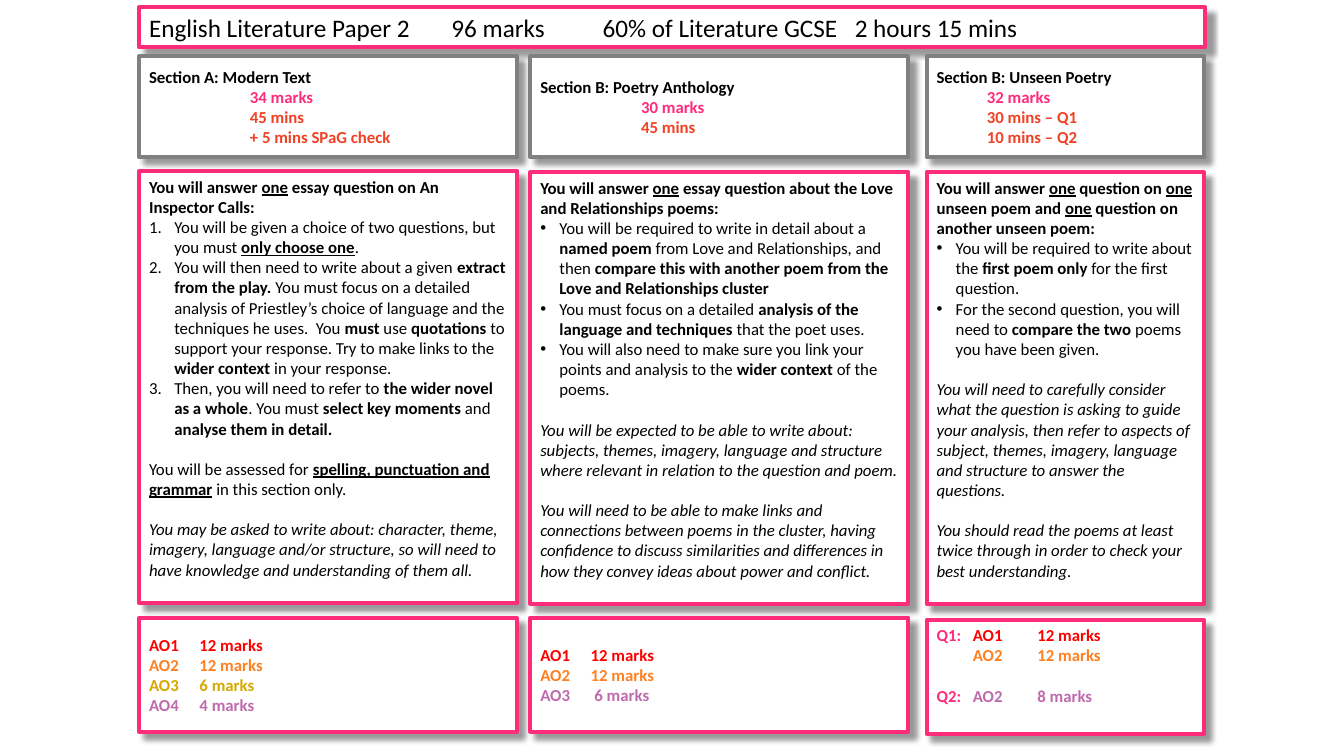
from lxml.etree import SubElement
from pptx import Presentation
from pptx.dml.color import RGBColor
from pptx.enum.shapes import MSO_SHAPE as SHAPE
from pptx.enum.text import MSO_ANCHOR as ANCHOR, PP_ALIGN as ALIGN
from pptx.oxml.ns import qn
from pptx.util import Inches, Pt

COLORS = {
    "black": "000000", "white": "FFFFFF", "gray": "808080", "pink": "FF2C79",
    "orange_red": "F14124", "red": "FF0000", "orange": "FF8021",
    "gold": "D7A800", "purple": "BF6AAD",
}
FONT = "Calibri"
LINE_GAP = Pt(14.4)
BULLET_INDENT = {"number": 0.25, "bullet": 0.19}


def add_card(page, left, top, width, height, border, anchor):
    box = page.shapes.add_shape(
        SHAPE.RECTANGLE, Inches(left), Inches(top), Inches(width), Inches(height))
    box.fill.solid()
    box.fill.fore_color.rgb = RGBColor.from_string(COLORS["white"])
    box.line.color.rgb = RGBColor.from_string(COLORS[border])
    box.line.width = Pt(3)
    box.shadow.inherit = False
    effects = box._element.spPr.find(qn("a:effectLst"))
    shadow = SubElement(effects, qn("a:outerShdw"), blurRad=str(Pt(4)),
                        dist=str(Pt(6)), dir="2700000", algn="tl", rotWithShape="0")
    tint = SubElement(shadow, qn("a:srgbClr"), val=COLORS["black"])
    SubElement(tint, qn("a:alpha"), val="40000")
    box.text_frame.word_wrap = True
    box.text_frame.vertical_anchor = anchor
    return box.text_frame


def write_paragraph(para, segments, size=12):
    # markup
    para.alignment = ALIGN.LEFT
    for color, text in segments:
        for bold, strong in enumerate(text.split("*")):
            for underline, piece in enumerate(strong.split("_")):
                if piece:
                    span = para.add_run()
                    span.text = piece
                    span.font.name = FONT
                    span.font.size = Pt(size)
                    span.font.bold = bold % 2 == 1
                    span.font.underline = underline % 2 == 1
                    span.font.color.rgb = RGBColor.from_string(COLORS[color])


columns = [(1.38, 3.75), (5.26, 3.75), (9.19, 2.75)]

headers = [
    [("black", "Section A: Modern Text"), ("pink", "\t\t34 marks"),
     ("orange_red", "\t\t45 mins"), ("orange_red", "\t\t+ 5 mins SPaG check")],
    [("black", "Section B: Poetry Anthology"), ("pink", "\t\t30 marks"),
     ("orange_red", "\t\t45 mins")],
    [("black", "Section B: Unseen Poetry"), ("pink", "\t32 marks"),
     ("orange_red", "\t30 mins – Q1"), ("orange_red", "\t10 mins – Q2")],
]

details = [
    (1.7, [
        ("plain", "*You will answer _one_ essay question on An Inspector Calls:*"),
        ("number", "You will be given a choice of two questions, but you must *_only choose one_*."),
        ("number", "You will then need to write about a given *extract from the play.* You must "
                   "focus on a detailed analysis of Priestley’s choice of language and the "
                   "techniques he uses.  You *must* use *quotations *to support your response. "
                   "Try to make links to the *wider context *in your response."),
        ("number", "Then, you will need to refer to *the wider novel as a whole*. You must "
                   "*select key moments* and *analyse them in detail.*"),
        ("spaced", "You will be assessed for *_spelling, punctuation and grammar_* in this "
                   "section only."),
        ("italic", "You may be asked to write about: character, theme, imagery, language "
                   "and/or structure, so will need to have knowledge and understanding of "
                   "them all."),
    ]),
    (1.71, [
        ("plain", "*You will answer _one_ essay question about the Love and Relationships poems:*"),
        ("bullet", "You will be required to write in detail about a *named poem *from Love and "
                   "Relationships, and then *compare this with another poem from the Love and "
                   "Relationships cluster*"),
        ("bullet", "You must focus on a detailed *analysis of the language and techniques *that "
                   "the poet uses."),
        ("bullet", "You will also need to make sure you link your points and analysis to the "
                   "*wider context *of the poems."),
        ("italic", "You will be expected to be able to write about: subjects, themes, imagery, "
                   "language and structure where relevant in relation to the question and poem."),
        ("italic", "You will need to be able to make links and connections between poems in the "
                   "cluster, having confidence to discuss similarities and differences in how "
                   "they convey ideas about power and conflict."),
    ]),
    (1.71, [
        ("plain", "*You will answer _one_ question on _one_ unseen poem and _one_ question on "
                  "another unseen poem:*"),
        ("bullet", "You will be required to write about the *first poem only *for the first "
                   "question."),
        ("bullet", "For the second question, you will need to *compare the two* poems you have "
                   "been given."),
        ("italic", "You will need to carefully consider what the question is asking to guide "
                   "your analysis, then refer to aspects of subject, themes, imagery, language "
                   "and structure to answer the questions."),
        ("italic", "You should read the poems at least twice through in order to check your "
                   "best understanding."),
    ]),
]

objectives = [
    (6.13, ANCHOR.MIDDLE, [
        [("red", "*AO1\t12 marks*")], [("orange", "*AO2\t12 marks*")],
        [("gold", "*AO3\t6 marks*")], [("purple", "*AO4\t4 marks*")]]),
    (6.13, ANCHOR.MIDDLE, [
        [("red", "*AO1\t12 marks*")], [("orange", "*AO2\t12 marks*")],
        [("purple", "*AO3\t 6 marks*")]]),
    (6.15, ANCHOR.TOP, [
        [("pink", "*Q1:*"), ("red", "*\tAO1\t12 marks*")],
        [("orange", "*\tAO2\t12 marks*")],
        [("pink", "*Q2:*"), ("purple", "*\tAO2\t8 marks*")]]),
]

deck = Presentation()
deck.slide_width = Inches(13.33)
deck.slide_height = Inches(7.5)
page = deck.slides.add_slide(deck.slide_layouts[6])

title = add_card(page, 1.38, 0.07, 10.57, 0.4, "pink", ANCHOR.TOP)
write_paragraph(title.paragraphs[0], [(
    "black", "English Literature Paper 2\t96 marks\t\t60% of Literature GCSE\t2 hours 15 mins")], 18)

for (left, width), header, (detail_top, detail), (aim_top, anchor, aims) in zip(
        columns, headers, details, objectives):
    frame = add_card(page, left, 0.56, width, 1, "gray", ANCHOR.MIDDLE)
    for index, (color, text) in enumerate(header):
        para = frame.add_paragraph() if index else frame.paragraphs[0]
        write_paragraph(para, [(color, f"*{text}*")])

    frame = add_card(page, left, detail_top, width, 4.28, "pink", ANCHOR.TOP)
    for index, (style, text) in enumerate(detail):
        para = frame.add_paragraph() if index else frame.paragraphs[0]
        if style in BULLET_INDENT:
            indent = Inches(BULLET_INDENT[style])
            properties = para._p.get_or_add_pPr()
            properties.set("marL", str(indent))
            properties.set("indent", str(-indent))
            if style == "number":
                SubElement(properties, qn("a:buFont"), typeface="+mj-lt")
                SubElement(properties, qn("a:buAutoNum"), type="arabicPeriod")
            else:
                SubElement(properties, qn("a:buFont"), typeface="Arial")
                SubElement(properties, qn("a:buChar"), char="•")
        elif style != "plain":
            para.space_before = LINE_GAP
        write_paragraph(para, [("black", text)])
        for span in para.runs:
            span.font.italic = style == "italic"

    frame = add_card(page, left, aim_top, width, 1.13, "pink", anchor)
    for index, segments in enumerate(aims):
        para = frame.add_paragraph() if index else frame.paragraphs[0]
        if anchor == ANCHOR.TOP:
            stops = SubElement(para._p.get_or_add_pPr(), qn("a:tabLst"))
            for position in (0.36, 1):
                SubElement(stops, qn("a:tab"), pos=str(Inches(position)), algn="l")
            if index == 2:
                para.space_before = LINE_GAP
        write_paragraph(para, segments)

deck.save("out.pptx")
